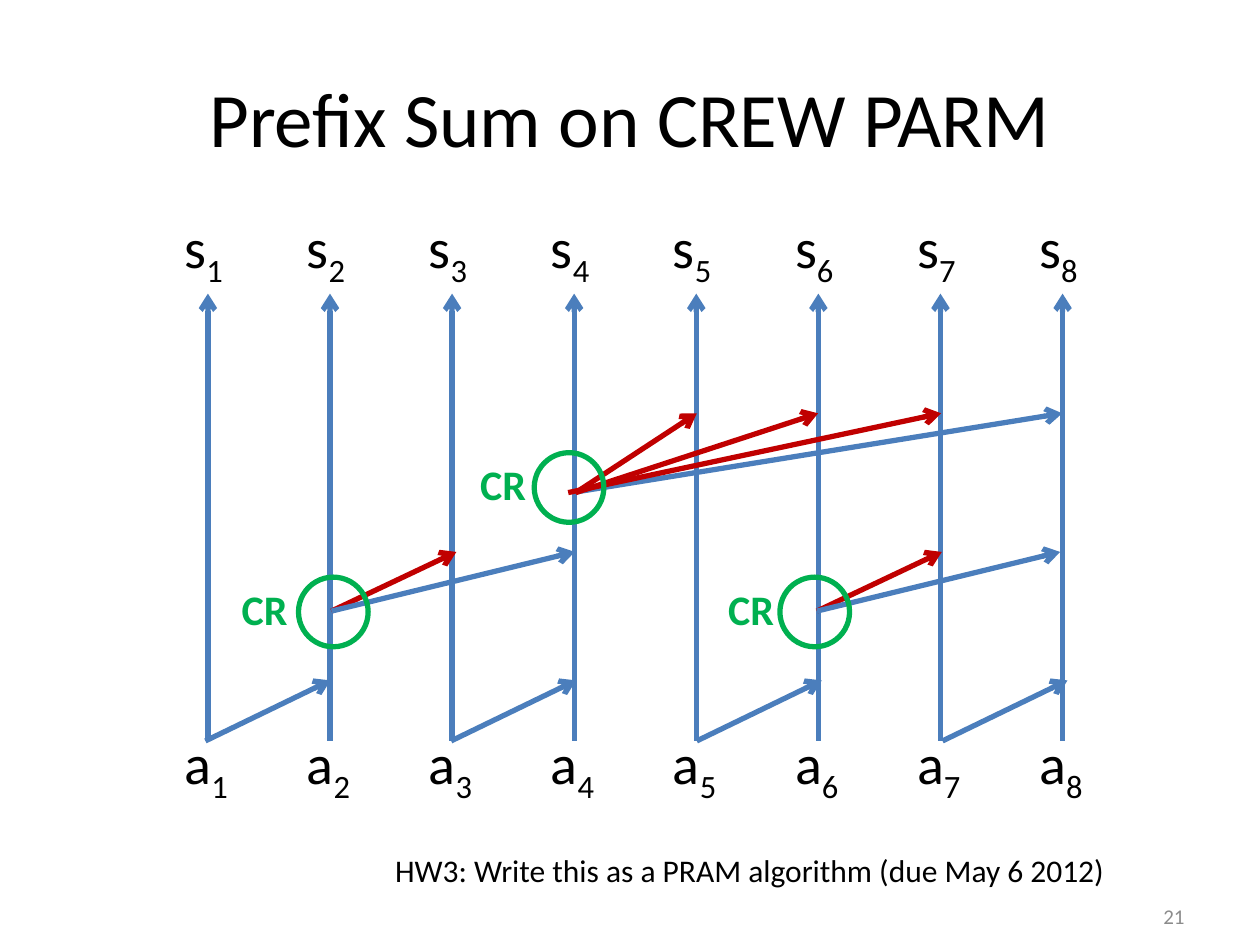
from pptx import Presentation
from pptx.dml.color import RGBColor
from pptx.enum.shapes import MSO_CONNECTOR as Conn, MSO_SHAPE as Shape
from pptx.enum.text import MSO_ANCHOR as Anchor, MSO_AUTO_SIZE as Fit, PP_ALIGN as Align
from pptx.oxml.ns import qn
from pptx.util import Pt
from lxml.etree import SubElement

HUES = {"ink": "000000", "grey": "8C8C8C", "blue": "4B7EBC",
        "red": "C00000", "green": "00B050"}


class Board:
    font = "Calibri"
    weight = 3

    def __init__(self, slide):
        self.slide = slide

    def hue(self, name):
        return RGBColor.from_string(HUES[name])

    def run(self, para, words, size, hue="ink", bold=False, sub=False):
        run = para.add_run()
        run.text = words
        run.font.name = self.font
        run.font.size = Pt(size)
        run.font.bold = bold
        run.font.color.rgb = self.hue(hue)
        if sub:
            run._r.get_or_add_rPr().set("baseline", "-25000")

    def title(self, words, x, y, w, h):
        box = self.slide.shapes.title
        box.left, box.top, box.width, box.height = Pt(x), Pt(y), Pt(w), Pt(h)
        box.text_frame.vertical_anchor = Anchor.MIDDLE
        para = box.text_frame.paragraphs[0]
        para.alignment = Align.CENTER
        self.run(para, words, 44)

    def text(self, x, y, w, h):
        """Add an unwrapped text box and return its first paragraph."""
        frame = self.slide.shapes.add_textbox(Pt(x), Pt(y), Pt(w), Pt(h)).text_frame
        frame.word_wrap = False
        frame.auto_size = Fit.SHAPE_TO_FIT_TEXT
        return frame.paragraphs[0]

    def term(self, letter, index, x, y, w):
        """Add a letter with a subscript index."""
        para = self.text(x, y, w, 46)
        self.run(para, letter, 32)
        self.run(para, str(index), 32, sub=True)

    def number(self, words, x, y, w, h):
        frame = self.slide.shapes.add_textbox(Pt(x), Pt(y), Pt(w), Pt(h)).text_frame
        frame.word_wrap = True
        frame.vertical_anchor = Anchor.MIDDLE
        para = frame.paragraphs[0]
        para.alignment = Align.RIGHT
        self.run(para, words, 12, "grey")

    def arrow(self, x1, y1, x2, y2, hue="blue"):
        link = self.slide.shapes.add_connector(
            Conn.STRAIGHT, Pt(x1), Pt(y1), Pt(x2), Pt(y2))
        link.line.color.rgb = self.hue(hue)
        link.line.width = Pt(self.weight)
        SubElement(link.line._get_or_add_ln(), qn("a:tailEnd"), type="arrow")
        SubElement(link._element.spPr, qn("a:effectLst"))

    def ring(self, x, y, size):
        ring = self.slide.shapes.add_shape(
            Shape.OVAL, Pt(x), Pt(y), Pt(size), Pt(size))
        ring.shadow.inherit = False
        ring.fill.background()
        ring.line.color.rgb = self.hue("green")
        ring.line.width = Pt(self.weight)


def main():
    deck = Presentation()
    deck.slide_width, deck.slide_height = Pt(720), Pt(540)
    board = Board(deck.slides.add_slide(deck.slide_layouts[5]))
    board.title("Prefix Sum on CREW PARM", 36, 21.6, 648, 90)
    board.number("21", 516, 509, 168, 28.8)

    left, step, base = 118.8, 69.77, 423.4
    for i in range(8):
        x = left + i * step
        board.arrow(x, base, x, 167.8)
        board.term("a", i + 1, x - 20.4, 412.6, 41)
        board.term("s", i + 1, x - 20.4, 118.1, 38.2)

    # Pairs, then groups of four, then the whole row
    for i in range(4):
        x = 117.4 + i * 140.4
        board.arrow(x, base, x + 71.4, 388.8)
    for x in (189.4, 466.8):
        board.arrow(x, 349.2, x + 71.4, 315.4, "red")
        board.arrow(x, 349.2, x + 139, 315.4)
    for x, end, hue in ((326.9, 607, "blue"), (324.7, 537.8, "red"),
                        (329, 467.5, "red"), (329, 398.2, "red")):
        board.arrow(x, 281.5, end, 236.2, hue)

    reads = ((170.6, 131, 329.8), (305.3, 267.3, 258.7), (445.7, 409, 329.8))
    for x, _, y in reads:
        board.ring(x, y, 39.8)
    for _, x, y in reads:
        board.run(board.text(x, y, 41, 36.4), "CR", 24, "green", bold=True)

    board.run(board.text(218.7, 482.6, 425, 29),
              "HW3: Write this as a PRAM algorithm (due May 6 2012)", 18)
    deck.save("out.pptx")


if __name__ == "__main__":
    main()
